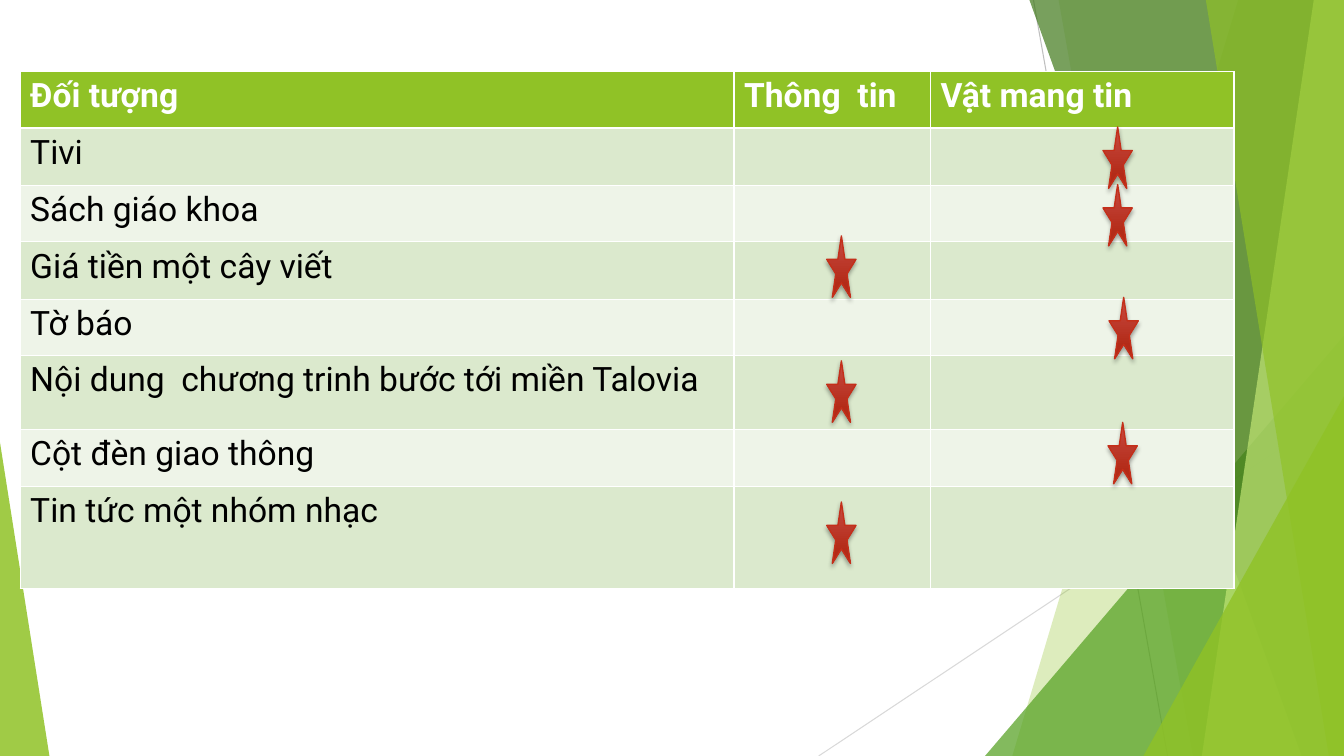
from pptx import Presentation
from pptx.dml.color import RGBColor
from pptx.enum import shapes
from pptx.oxml import parse_xml
from pptx.oxml.ns import nsdecls
from pptx.util import Inches, Pt

WIDTH, HEIGHT = 13.33, 7.5
FONT = "Roboto"
COLORS = {
    "white": "FFFFFF", "black": "000000", "gray": "BFBFBF", "pale_gray": "D9D9D9",
    "lime": "90C226", "green": "54A021", "forest": "3F7819", "pale_lime": "C0E474",
    "band_dark": "DBE9CD", "band_light": "EEF4E8",
    "star_top": "C74B42", "star_bottom": "B32B18", "star_line": "C42F1A",
}
HEADER = ["Đối tượng", "Thông  tin", "Vật mang tin"]
OBJECTS = [
    "Tivi",
    "Sách giáo khoa",
    "Giá tiền một cây viết",
    "Tờ báo",
    "Nội dung  chương trinh bước tới miền Talovia",
    "Cột đèn giao thông",
    "Tin tức một nhóm nhạc",
]
COLUMN_WIDTHS = [7.08, 1.95, 3.01]
ROW_HEIGHTS = [0.56, 0.57, 0.56, 0.57, 0.56, 0.73, 0.57, 1.01]
STARS = [(10.94, 1.26), (10.94, 1.83), (8.2, 2.34), (11, 2.95),
         (8.2, 3.58), (10.99, 4.19), (8.2, 4.98)]


def rgb(name):
    return RGBColor.from_string(COLORS[name])


def add_line(s, start, end, color):
    line = s.shapes.add_connector(
        shapes.MSO_CONNECTOR.STRAIGHT, *(Inches(v) for v in start + end))
    line.line.color.rgb = rgb(color)
    line.line.width = Pt(0.75)
    line._element.spPr.append(parse_xml(f"<a:effectLst {nsdecls('a')}/>"))


def fill_glass(sp, color, opacity):
    """Give a shape a see-through fill, with opacity in percent, and no outline."""
    sp.shadow.inherit = False
    sp.line.fill.background()
    sp.fill.solid()
    sp.fill.fore_color.rgb = rgb(color)
    srgb = sp._element.spPr.find(".//{*}solidFill/{*}srgbClr")
    srgb.append(parse_xml(f'<a:alpha {nsdecls("a")} val="{opacity * 1000}"/>'))


def add_facet(s, top_x, bottom_x, color, opacity):
    """Fill the area between a slanted edge and the right side of the slide."""
    corners = [(top_x, 0), (WIDTH, 0), (WIDTH, HEIGHT), (bottom_x, HEIGHT)]
    points = [(Inches(x), Inches(y)) for x, y in corners]
    builder = s.shapes.build_freeform(*points[0])
    builder.add_line_segments(points[1:])
    fill_glass(builder.convert_to_shape(), color, opacity)


def add_wedge(s, left, top, width, apex, color, opacity):
    """Add a triangle that stands on the bottom edge of the slide."""
    sp = s.shapes.add_shape(
        shapes.MSO_SHAPE.ISOSCELES_TRIANGLE,
        Inches(left), Inches(top), Inches(width), Inches(HEIGHT - top))
    sp.adjustments[0] = apex
    fill_glass(sp, color, opacity)


def add_backdrop(s):
    add_line(s, (10.25, 0), (11.58, HEIGHT), "gray")
    add_line(s, (WIDTH, 4.03), (8.12, HEIGHT), "pale_gray")
    add_facet(s, 12.28, 10.04, "lime", 30)
    add_facet(s, 10.5, 11.83, "lime", 20)
    add_wedge(s, 9.77, 3.33, 3.56, 1, "green", 72)
    add_facet(s, 10.21, 12.91, "forest", 70)
    add_facet(s, 13.03, 11.92, "pale_lime", 70)
    add_facet(s, 11.96, 13.18, "lime", 65)
    add_wedge(s, 11.34, 3.93, 1.99, 1, "lime", 80)
    add_wedge(s, 0, 4.39, 0.49, 0, "lime", 85)


def add_object_table(s):
    rows = [HEADER] + [[name, "", ""] for name in OBJECTS]
    table = s.shapes.add_table(
        len(rows), len(HEADER), Inches(0.2), Inches(0.71),
        Inches(sum(COLUMN_WIDTHS)), Inches(sum(ROW_HEIGHTS))).table
    for column, width in zip(table.columns, COLUMN_WIDTHS):
        column.width = Inches(width)
    for row, height in zip(table.rows, ROW_HEIGHTS):
        row.height = Inches(height)
    for i, row in enumerate(rows):
        band = "lime" if i == 0 else "band_dark" if i % 2 else "band_light"
        for j, value in enumerate(row):
            cell = table.cell(i, j)
            cell.fill.solid()
            cell.fill.fore_color.rgb = rgb(band)
            cell.text = value
            font = cell.text_frame.paragraphs[0].font
            font.name, font.size, font.bold = FONT, Pt(24), i == 0
            font.color.rgb = rgb("black" if i else "white")


def add_star(s, left, top):
    sp = s.shapes.add_shape(shapes.MSO_SHAPE.STAR_5_POINT, Inches(left),
                            Inches(top), Inches(0.29), Inches(0.61))
    sp.fill.gradient()
    sp.fill.gradient_angle = 270
    for stop, position, color in zip(
            sp.fill.gradient_stops, (0, 0.78), ("star_top", "star_bottom")):
        stop.position = position
        stop.color.rgb = rgb(color)
    sp.line.color.rgb = rgb("star_line")
    sp.line.width = Pt(1)
    sp.shadow.inherit = False
    sp._element.spPr.find("{*}effectLst").append(parse_xml(
        f'<a:outerShdw {nsdecls("a")} blurRad="{Pt(3)}" dist="{Pt(2)}" '
        f'dir="5400000" rotWithShape="0"><a:srgbClr val="{COLORS["black"]}">'
        '<a:alpha val="35000"/></a:srgbClr></a:outerShdw>'))


def main():
    prs = Presentation()
    prs.slide_width, prs.slide_height = Inches(WIDTH), Inches(HEIGHT)
    s = prs.slides.add_slide(prs.slide_layouts[6])
    add_backdrop(s)
    add_object_table(s)
    for left, top in STARS:
        add_star(s, left, top)
    prs.save("out.pptx")


if __name__ == "__main__":
    main()
